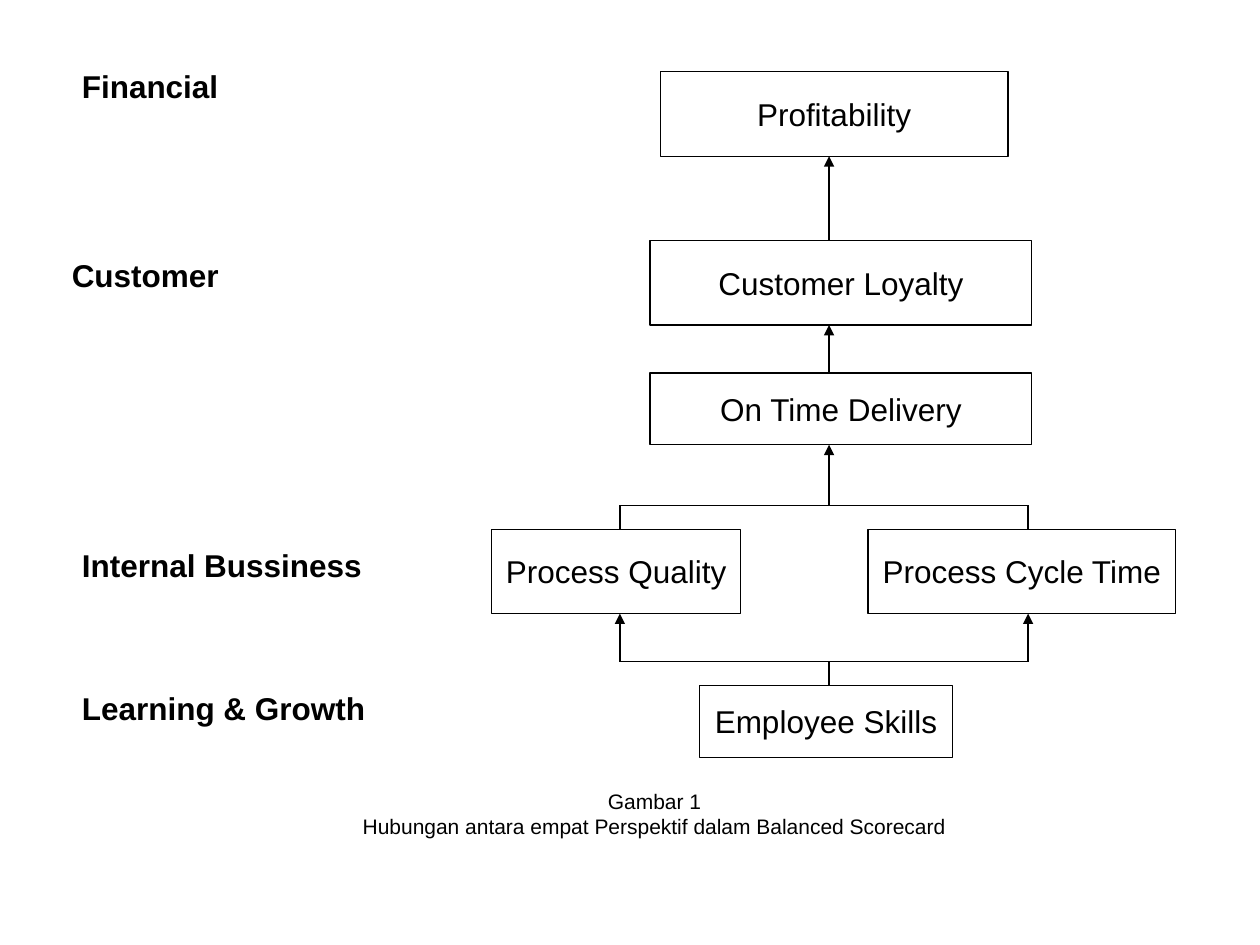
"""Builds a slide linking the four Balanced Scorecard perspectives."""
from lxml.etree import SubElement as Sub
from pptx import Presentation
from pptx.dml.color import RGBColor
from pptx.enum.shapes import MSO_CONNECTOR as Conn, MSO_SHAPE as Kind
from pptx.enum.text import MSO_ANCHOR as Anchor, MSO_AUTO_SIZE as Auto, PP_ALIGN as Align
from pptx.oxml.ns import qn
from pptx.util import Inches, Pt

INK, PAPER = "000000", "FFFFFF"
LEFT, MID, RIGHT = 4.92, 6.58, 8.16
TOP = {"profit": 0.57, "loyal": 1.91, "time": 2.96, "process": 4.2, "skill": 5.44}
TALL, LOW, STUB = 0.67, 0.57, 0.19

LABELS = [
    ("Financial", 0.58, 0.5, 2.13),
    ("Customer", 0.5, 2, 2.13),
    ("Internal Bussiness", 0.58, 4.3, 3.95),
    ("Learning & Growth", 0.58, 5.44, 3.79),
]
BOXES = [
    ("Profitability", "profit", 5.24, 2.76, TALL, True),
    ("Customer Loyalty", "loyal", 5.16, 3.03, TALL, True),
    ("On Time Delivery", "time", 5.16, 3.03, LOW, True),
    ("Process Quality", "process", 3.9, 1.98, TALL, False),
    ("Process Cycle Time", "process", 6.89, 2.44, TALL, False),
    ("Employee Skills", "skill", 5.55, 2.01, LOW, False),
]
CAPTION = "Gambar 1\nHubungan antara empat Perspektif dalam Balanced Scorecard"

JOIN, FORK = TOP["process"] - STUB, TOP["skill"] - STUB
BASE = TOP["process"] + TALL
ARROWS = [
    (MID, TOP["loyal"], TOP["profit"] + TALL),
    (MID, TOP["time"], TOP["loyal"] + TALL),
    (MID, JOIN, TOP["time"] + LOW),
    (LEFT, FORK, BASE),
    (RIGHT, FORK, BASE),
]
STUBS = [(LEFT, TOP["process"], JOIN), (RIGHT, TOP["process"], JOIN), (MID, TOP["skill"], FORK)]


def color(code):
    return RGBColor.from_string(code)


def write(shape, text, size, bold=False, align=Align.LEFT, wrap=True):
    frame = shape.text_frame
    frame.text = text
    frame.word_wrap = wrap
    frame.margin_left = frame.margin_right = Inches(0.07)
    frame.margin_top = frame.margin_bottom = Inches(0.03)
    for para in frame.paragraphs:
        para.alignment = align
        for run in para.runs:
            font = run.font
            font.name, font.size, font.bold = "Arial", Pt(size), bold
            font.color.rgb = color(INK)
    return frame


def note(slide, text, x, y, w, h, size, **style):
    box = slide.shapes.add_textbox(*map(Inches, (x, y, w, h)))
    write(box, text, size, **style).auto_size = Auto.SHAPE_TO_FIT_TEXT


def node(slide, text, row, x, w, h, wrap):
    box = slide.shapes.add_shape(Kind.RECTANGLE, *map(Inches, (x, TOP[row], w, h)))
    box.shadow.inherit = False
    box.fill.solid()
    box.fill.fore_color.rgb = color(PAPER)
    box.line.color.rgb = color(INK)
    box.line.width = Pt(0.75)
    frame = write(box, text, 18, align=Align.CENTER, wrap=wrap)
    frame.vertical_anchor = Anchor.MIDDLE


def link(slide, x1, y1, x2, y2, head=False):
    wire = slide.shapes.add_connector(Conn.STRAIGHT, *map(Inches, (x1, y1, x2, y2)))
    wire.line.color.rgb = color(INK)
    wire.line.width = Pt(0.75)
    if head:
        Sub(wire.line._get_or_add_ln(), qn("a:tailEnd"), type="triangle")
    Sub(wire._element.spPr, qn("a:effectLst"))


def main():
    deck = Presentation()
    deck.slide_width, deck.slide_height = Inches(10), Inches(7.5)
    slide = deck.slides.add_slide(deck.slide_layouts[6])
    for text, x, y, w in LABELS:
        note(slide, text, x, y, w, 0.54, 18, bold=True)
    for box in BOXES:
        node(slide, *box)
    for x, start, end in ARROWS:
        link(slide, x, start, x, end, head=True)
    for x, start, end in STUBS:
        link(slide, x, start, x, end)
    for y in (JOIN, FORK):
        link(slide, LEFT, y, RIGHT, y)
    note(slide, CAPTION, 1.21, 6.23, 7.97, 0.47, 12, align=Align.CENTER)
    deck.save("out.pptx")


if __name__ == "__main__":
    main()
